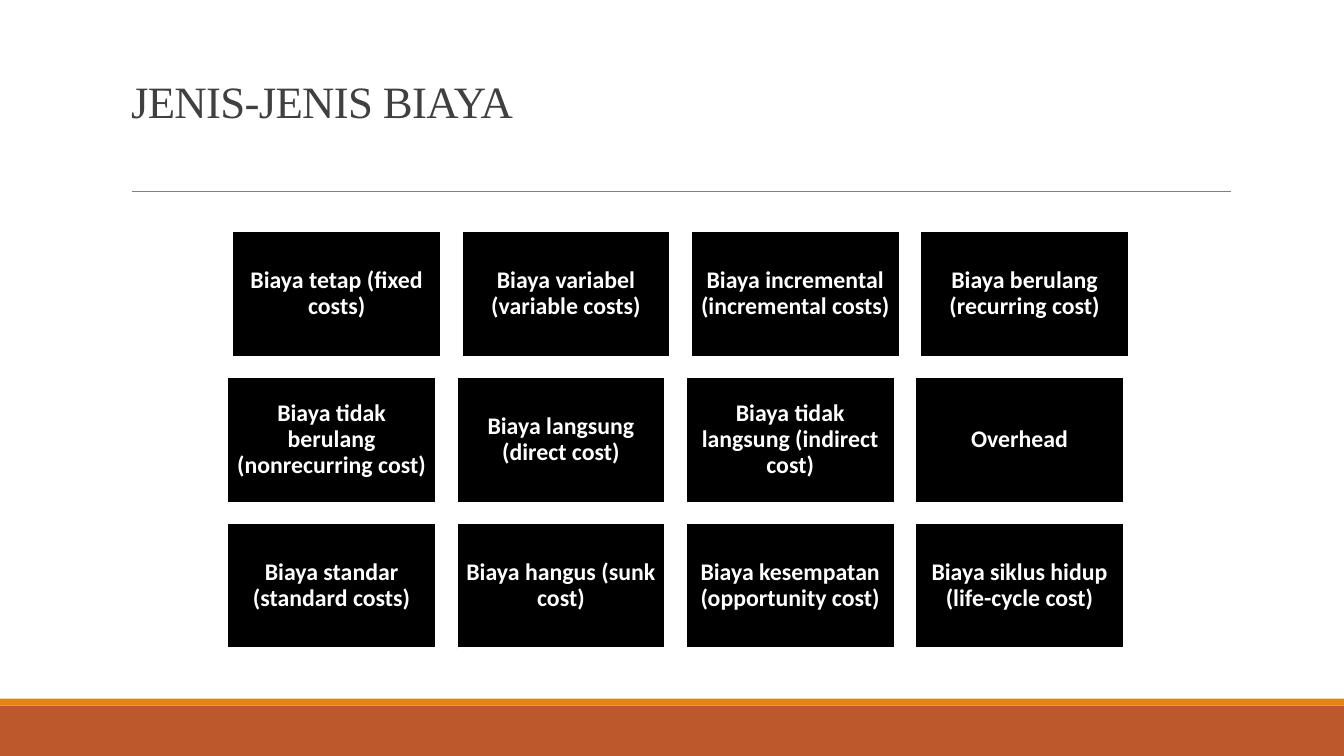
import pptx
import pptx.util
import pptx.dml.color
import pptx.enum.shapes
import pptx.enum.text
import pptx.oxml.ns
import lxml.etree

Pt = pptx.util.Pt
ANCHOR = pptx.enum.text.MSO_ANCHOR
ALIGN = pptx.enum.text.PP_ALIGN

COLORS = {
    "title": "404040",
    "rule": "808080",
    "band": "BD582C",
    "accent": "E48312",
    "box": "000000",
    "white": "FFFFFF",
}

COSTS = [
    ["Biaya tetap (fixed costs)", "Biaya variabel (variable costs)",
     "Biaya incremental (incremental costs)", "Biaya berulang (recurring cost)"],
    ["Biaya tidak berulang (nonrecurring cost)", "Biaya langsung (direct cost)",
     "Biaya tidak langsung (indirect cost)", "Overhead"],
    ["Biaya standar (standard costs)", "Biaya hangus (sunk cost)",
     "Biaya kesempatan (opportunity cost)", "Biaya siklus hidup (life-cycle cost)"],
]


class SlideBuilder:
    def __init__(self, slide):
        self.s = slide

    def color(self, name):
        return pptx.dml.color.RGBColor.from_string(COLORS[name])

    def font(self, p, name, size, color, bold=False):
        for r in p.runs:
            r.font.name = name
            r.font.size = Pt(size)
            r.font.bold = bold
            r.font.color.rgb = self.color(color)

    def title(self, text, x, y, w, h):
        sp = self.s.shapes.title
        sp.left, sp.top, sp.width, sp.height = Pt(x), Pt(y), Pt(w), Pt(h)
        tf = sp.text_frame
        tf.text = text
        tf.vertical_anchor = ANCHOR.BOTTOM
        p = tf.paragraphs[0]
        p.alignment = ALIGN.LEFT
        p.line_spacing = 0.85
        self.font(p, "Times New Roman", 32, "title")
        # Slightly tightened letter spacing, in hundredths of a point
        p.runs[0].font._element.set("spc", "-50")

    def rect(self, x, y, w, h, fill, line=None):
        sp = self.s.shapes.add_shape(
            pptx.enum.shapes.MSO_SHAPE.RECTANGLE, Pt(x), Pt(y), Pt(w), Pt(h))
        sp.shadow.inherit = False
        sp.fill.solid()
        sp.fill.fore_color.rgb = self.color(fill)
        if line:
            sp.line.color.rgb = self.color(line)
            sp.line.width = Pt(1.25)
        else:
            sp.line.fill.background()
        return sp

    def cost_box(self, text, x, y, w, h):
        tf = self.rect(x, y, w, h, "box", "white").text_frame
        tf.text = text
        tf.word_wrap = True
        tf.vertical_anchor = ANCHOR.MIDDLE
        tf.margin_left = tf.margin_right = tf.margin_top = tf.margin_bottom = Pt(5.1)
        p = tf.paragraphs[0]
        p.alignment = ALIGN.CENTER
        p.line_spacing = 0.9
        self.font(p, "Calibri", 17, "white", bold=True)

    def rule(self, x1, x2, y):
        c = self.s.shapes.add_connector(
            pptx.enum.shapes.MSO_CONNECTOR.STRAIGHT, Pt(x1), Pt(y), Pt(x2), Pt(y))
        c.line.color.rgb = self.color("rule")
        c.line.width = Pt(0.5)
        lxml.etree.SubElement(c._element.spPr, pptx.oxml.ns.qn("a:effectLst"))


def main():
    prs = pptx.Presentation()
    prs.slide_width, prs.slide_height = Pt(960), Pt(540)
    b = SlideBuilder(prs.slides.add_slide(prs.slide_layouts[5]))

    # Footer bands and heading
    b.rect(0, 504, 960, 36, "band")
    b.rect(0, 499, 960, 5, "accent")
    b.rule(94, 879, 136.5)
    b.title("JENIS-JENIS BIAYA", 86.4, 22.3, 792, 72.7)

    # Grid of cost types; the first row sits slightly further right
    for row, names in enumerate(COSTS):
        left = 166 if row == 0 else 162.4
        for col, name in enumerate(names):
            b.cost_box(name, left + col * 163.8, 165.3 + row * 104.2, 148.9, 89.4)

    prs.save("out.pptx")


if __name__ == "__main__":
    main()
